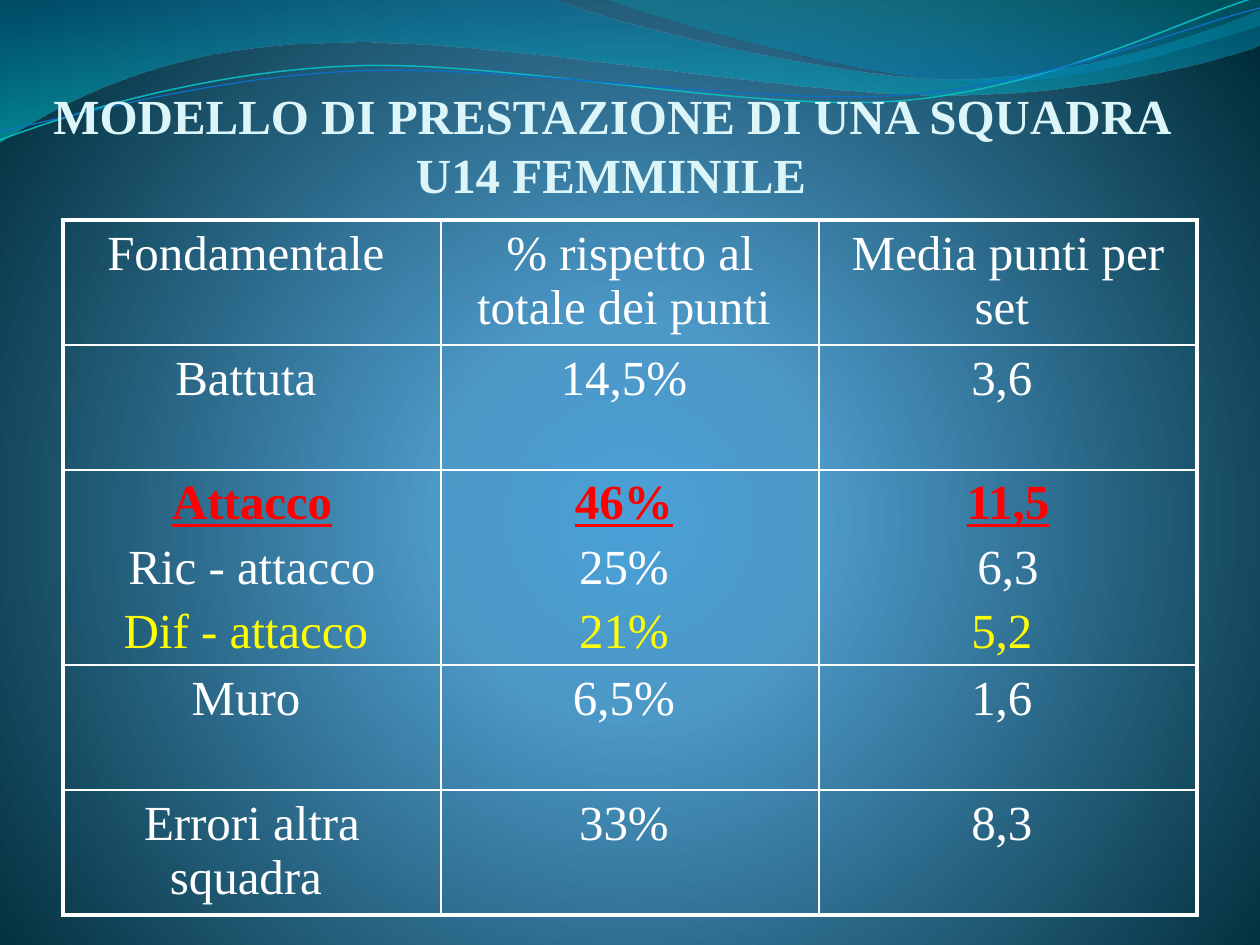
import pptx
import pptx.dml.color
import pptx.enum.text
import pptx.oxml
import pptx.oxml.ns
import pptx.util

# Content: a cell is a list of paragraphs, a paragraph a list of (text, style)
TITLE = "MODELLO DI PRESTAZIONE DI UNA SQUADRA U14 FEMMINILE"
ATTACK = [
    [[("Attacco", "key")], [("Ric - attacco", "plain")], [("Dif - attacco ", "defence")]],
    [[("46%", "key"), (" ", "bold")], [("25% ", "plain")], [("21% ", "defence")]],
    [[("11,5", "key")], [("6,3", "plain")], [("5,2 ", "defence")]],
]
ROWS = [
    ["Fondamentale ", "% rispetto al totale dei punti ", "Media punti per set "],
    ["Battuta ", "14,5% ", "3,6 "],
    ATTACK,
    ["Muro ", "6,5% ", "1,6 "],
    ["Errori altra squadra ", "33% ", "8,3 "],
]

THEME = {
    "font": "Times New Roman",
    "size": 28,
    "cell_line": 31,
    "title": "DBF5F9",
    "border": "FFFFFF",
    "inner": 1,
    "outer": 2.25,
    # Gradient stops: position %, colour, opacity %
    "background": [(0, "4AA0D6", 100), (25, "4C98C7", 100), (100, "002C38", 100)],
    "styles": {
        "plain": {"color": "FFFFFF", "bold": False, "underline": False},
        "bold": {"color": "FF0000", "bold": True, "underline": False},
        "key": {"color": "FF0000", "bold": True, "underline": True},
        "defence": {"color": "FFFF00", "bold": False, "underline": False},
    },
}

# Waves: each stroke is one point (line) or three points (cubic curve), px
BANDS = [
    {
        "start": (0, 0),
        "strokes": [
            [(554, -1)],
            [(600, 21), (837, 79), (955, 79)],
            [(1075, 79), (1207, 33), (1260, 11)],
            [(1261, 45)],
            [(1239, 55), (1096, 96), (940, 95)],
            [(784, 95), (481, 35), (324, 43)],
            [(163, 45), (58, 105), (-1, 142)],
            [(0, 0)],
        ],
        "stops": [(0, "0074A1", 45), (100, "00C6CF", 55)],
    },
    {
        "start": (604, -1),
        "strokes": [
            [(641, 14), (859, 78), (969, 82)],
            [(1079, 87), (1211, 40), (1260, 26)],
            [(1260, 0)],
            [(604, -1)],
        ],
        "stops": [(0, "00A1A9", 30), (80, "008BBF", 45)],
    },
]
LINES = [
    {
        "start": (0, 140),
        "strokes": [
            [(60, 117), (199, 72), (349, 66)],
            [(498, 59), (747, 112), (898, 101)],
            [(1050, 89), (1182, 19), (1257, -3)],
        ],
        "color": "0AB8BF", "width": 0.85,
    },
    {
        "start": (0, 131),
        "strokes": [
            [(59, 121), (207, 77), (357, 71)],
            [(508, 64), (752, 106), (903, 95)],
            [(1053, 84), (1186, 26), (1260, 8)],
        ],
        "color": "0F6FC6", "width": 0.75,
    },
]

# Layout, px
SLIDE = (1260, 945)
TITLE_BOX = (44, 45, 1134, 158)
TABLE_LEFT, TABLE_TOP, COLUMN_WIDTH = 63, 220, 378
ROW_HEIGHT, ATTACK_HEIGHT = 125, 195


def px(value):
    return round(value * 914400 / 126)


def rgb(value):
    return pptx.dml.color.RGBColor.from_string(value)


def xml(text):
    namespace = pptx.oxml.ns.nsdecls("a")
    return pptx.oxml.parse_xml(text.replace(">", f" {namespace}>", 1))


def set_gradient(owner, stops, direction):
    """Refill the owner's gradFill with the given stops and direction."""
    gradient = next(owner.iter(pptx.oxml.ns.qn("a:gradFill")))
    for child in list(gradient):
        gradient.remove(child)
    marks = "".join(
        f'<a:gs pos="{place * 1000}"><a:srgbClr val="{color}">'
        f'<a:alpha val="{opacity * 1000}"/></a:srgbClr></a:gs>'
        for place, color, opacity in stops
    )
    gradient.append(xml(f"<a:gsLst>{marks}</a:gsLst>"))
    gradient.append(xml(direction))


def add_wave(page, wave, close):
    """Lay the points out as a freeform, then join triples into curves."""
    builder = page.shapes.build_freeform(*map(px, wave["start"]))
    points = [(px(x), px(y)) for stroke in wave["strokes"] for x, y in stroke]
    builder.add_line_segments(points, close=close)
    shape = builder.convert_to_shape()
    shape.shadow.inherit = False
    segments = iter(list(shape._element.iter(pptx.oxml.ns.qn("a:lnTo"))))
    for stroke in wave["strokes"]:
        parts = [next(segments) for _ in stroke]
        if len(parts) == 3:
            curve = xml("<a:cubicBezTo></a:cubicBezTo>")
            parts[0].addprevious(curve)
            for part in parts:
                curve.append(part[0])
                part.getparent().remove(part)
    return shape


def add_span(para, text, color, **formats):
    span = para.add_run()
    span.text = text
    span.font.color.rgb = rgb(color)
    formats.update(name=THEME["font"], size=pptx.util.Pt(THEME["size"]))
    for name, value in formats.items():
        setattr(span.font, name, value)


def set_borders(cell, row, column):
    outer = {"L": column == 0, "R": column == 2, "T": row == 0, "B": row == len(ROWS) - 1}
    properties = cell._tc.get_or_add_tcPr()
    for side, is_outer in outer.items():
        width = pptx.util.Pt(THEME["outer" if is_outer else "inner"])
        properties.append(xml(
            f'<a:ln{side} w="{width}"><a:solidFill><a:srgbClr val="{THEME["border"]}"/>'
            f"</a:solidFill></a:ln{side}>"
        ))
    cell.fill.background()


def fill_cell(cell, content):
    if isinstance(content, str):
        content = [[(content, "plain")]]
    for index, spans in enumerate(content):
        para = cell.text_frame.add_paragraph() if index else cell.text_frame.paragraphs[0]
        para.alignment = pptx.enum.text.PP_ALIGN.CENTER
        para.line_spacing = pptx.util.Pt(THEME["cell_line"])
        if index:
            para.space_before = pptx.util.Pt(THEME["size"] * 0.2)
        for text, style in spans:
            add_span(para, text, **THEME["styles"][style])


def main():
    deck = pptx.Presentation()
    deck.slide_width, deck.slide_height = map(px, SLIDE)
    page = deck.slides.add_slide(deck.slide_layouts[6])

    # Background
    page.background.fill.gradient()
    set_gradient(
        page._element, THEME["background"],
        '<a:path path="circle"><a:fillToRect l="10000" t="110000" r="10000" b="100000"/></a:path>',
    )

    # Waves
    for band in BANDS:
        shape = add_wave(page, band, True)
        shape.line.fill.background()
        shape.fill.gradient()
        set_gradient(shape._element, band["stops"], '<a:lin ang="5400000" scaled="1"></a:lin>')
    for line in LINES:
        shape = add_wave(page, line, False)
        shape.fill.background()
        shape.line.color.rgb = rgb(line["color"])
        shape.line.width = pptx.util.Pt(line["width"])

    # Title
    frame = page.shapes.add_textbox(*map(px, TITLE_BOX)).text_frame
    layout = {"word_wrap": True, "vertical_anchor": pptx.enum.text.MSO_ANCHOR.BOTTOM,
              "margin_left": 0, "margin_right": 0, "margin_bottom": 0}
    for name, value in layout.items():
        setattr(frame, name, value)
    para = frame.paragraphs[0]
    para.alignment = pptx.enum.text.PP_ALIGN.CENTER
    add_span(para, TITLE, THEME["title"], bold=True)

    # Table
    heights = [ATTACK_HEIGHT if row is ATTACK else ROW_HEIGHT for row in ROWS]
    area = (TABLE_LEFT, TABLE_TOP, 3 * COLUMN_WIDTH, sum(heights))
    table = page.shapes.add_table(len(ROWS), 3, *map(px, area)).table
    table.first_row = table.horz_banding = False
    for row, contents in enumerate(ROWS):
        table.rows[row].height = px(heights[row])
        for column, content in enumerate(contents):
            cell = table.cell(row, column)
            set_borders(cell, row, column)
            fill_cell(cell, content)

    deck.save("out.pptx")


if __name__ == "__main__":
    main()
